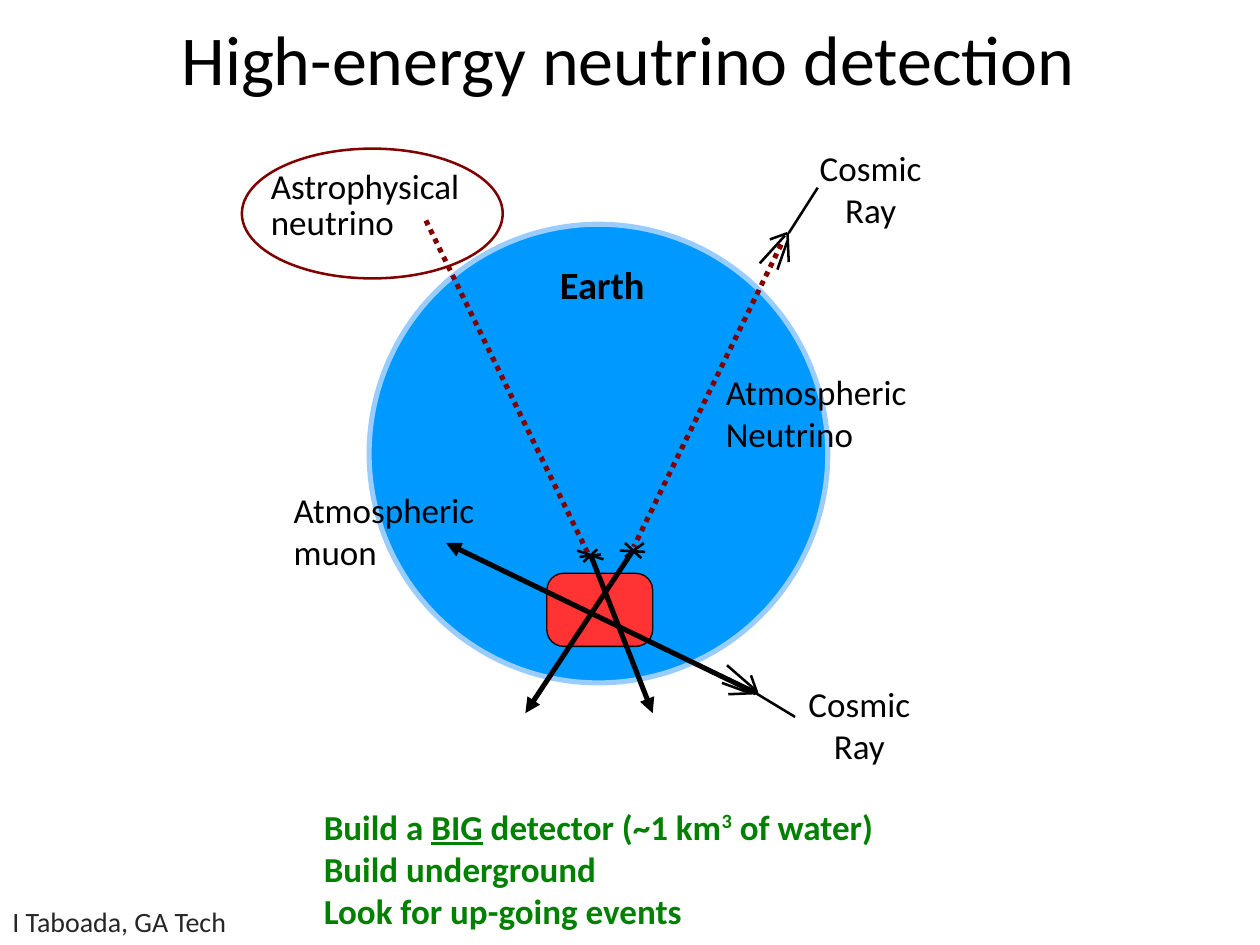
from dataclasses import dataclass

from lxml.etree import SubElement
from pptx import Presentation
from pptx.dml.color import RGBColor
from pptx.enum.dml import MSO_LINE
from pptx.enum.shapes import MSO_CONNECTOR, MSO_SHAPE
from pptx.enum.text import MSO_ANCHOR, PP_ALIGN
from pptx.oxml.ns import qn
from pptx.util import Inches, Pt


@dataclass(frozen=True)
class Theme:
    font: str = "Calibri"
    ink: str = "000000"
    footer: str = "262626"
    neutrino: str = "800000"
    conclusion: str = "008000"
    earth: str = "0099FF"
    atmosphere: str = "99CCFF"
    detector: str = "FF3333"
    title_size: float = 40
    earth_size: float = 22
    label_size: float = 20
    footer_size: float = 16
    thick: float = 2.89
    thin: float = 1.45
    hairline: float = 0.75


@dataclass(frozen=True)
class Box:
    left: float
    top: float
    width: float
    height: float

    def inner(self, left, top, width, height):
        return Box(self.left + left, self.top + top, width, height)

    def point(self, x, y):
        return Inches(self.left + x), Inches(self.top + y)

    def lengths(self):
        return [Inches(v) for v in (self.left, self.top, self.width, self.height)]


THEME = Theme()


def color(code):
    return RGBColor.from_string(code)


def format_text(frame, size, ink=THEME.ink, bold=False, align=PP_ALIGN.LEFT):
    for para in frame.paragraphs:
        para.alignment = align
        for span in para.runs:
            span.font.name = THEME.font
            span.font.size = Pt(size)
            span.font.bold = bold
            span.font.color.rgb = color(ink)


def add_label(page, box, text, size=THEME.label_size, margins=(0.09, 0.04),
              wrap=True, **style):
    frame = page.shapes.add_textbox(*box.lengths()).text_frame
    frame.word_wrap = wrap
    frame.margin_left = frame.margin_right = Inches(margins[0])
    frame.margin_top = frame.margin_bottom = Inches(margins[1])
    frame.text = text
    format_text(frame, size, **style)
    return frame


def add_outline(page, kind, box, line, width, fill=None):
    shape = page.shapes.add_shape(kind, *box.lengths())
    shape.shadow.inherit = False
    if fill:
        shape.fill.solid()
        shape.fill.fore_color.rgb = color(fill)
    else:
        shape.fill.background()
    shape.line.color.rgb = color(line)
    shape.line.width = Pt(width)
    return shape


def add_line(page, box, start, end, ink=THEME.ink, width=THEME.thin,
             dotted=False, arrow=False):
    line = page.shapes.add_connector(
        MSO_CONNECTOR.STRAIGHT, *box.point(*start), *box.point(*end))
    line.line.color.rgb = color(ink)
    line.line.width = Pt(width)
    if dotted:
        line.line.dash_style = MSO_LINE.ROUND_DOT
    if arrow:
        SubElement(line.line._get_or_add_ln(), qn("a:tailEnd"), type="triangle")
    SubElement(line._element.spPr, qn("a:effectLst"))


def add_title(page, box):
    title = page.shapes.title
    title.left, title.top, title.width, title.height = box.lengths()
    frame = title.text_frame
    frame.text = "High-energy neutrino detection"
    frame.vertical_anchor = MSO_ANCHOR.MIDDLE
    format_text(frame, THEME.title_size, align=PP_ALIGN.CENTER)


def add_footer(page, box):
    add_label(page, box, "I Taboada, GA Tech", THEME.footer_size,
              margins=(0.1, 0.05), wrap=False, ink=THEME.footer)


def add_conclusions(page, box):
    frame = add_label(page, box, "\nBuild underground\nLook for up-going events")
    first = frame.paragraphs[0]
    for text in ("Build a ", "BIG", " detector (~1 km", "3", " of water)"):
        first.add_run().text = text
    format_text(frame, THEME.label_size, THEME.conclusion, bold=True)
    first.runs[1].font.underline = True
    first.runs[3].font._element.set("baseline", "33000")


def add_earth(page, box):
    add_outline(page, MSO_SHAPE.OVAL, box.inner(0.93, 0.78, 3.64, 3.64),
                THEME.atmosphere, THEME.thick, THEME.earth)
    detector = add_outline(
        page, MSO_SHAPE.ROUNDED_RECTANGLE, box.inner(2.34, 3.55, 0.84, 0.58),
        THEME.ink, THEME.hairline, THEME.detector)
    detector.adjustments[0] = 0.23


def add_tracks(page, box):
    # Dotted neutrino paths
    for start, end in (((4.2, 0.94), (3.03, 3.34)), ((1.38, 0.75), (2.67, 3.4))):
        add_line(page, box, start, end, THEME.neutrino, THEME.thick, dotted=True)
    # Muon arrows
    for start, end in (((4, 4.5), (1.54, 3.31)),
                       ((3.03, 3.36), (2.17, 4.66)),
                       ((2.69, 3.41), (3.18, 4.66))):
        add_line(page, box, start, end, width=THEME.thick, arrow=True)
    # Cosmic ray showers, then the stars where neutrinos interact
    strokes = (
        ((4.31, 4.69), (3.98, 4.49)), ((4, 4.48), (3.77, 4.28)),
        ((3.95, 4.5), (3.73, 4.42)), ((4.01, 4.5), (3.96, 4.36)),
        ((4.01, 4.5), (3.78, 4.51)),
        ((4.49, 0.49), (4.26, 0.85)), ((4.23, 0.87), (4.03, 1.09)),
        ((4.25, 0.91), (4.17, 1.14)), ((4.25, 0.85), (4.11, 0.9)),
        ((4.25, 0.85), (4.26, 1.08)),
        ((3.12, 3.38), (2.92, 3.37)), ((3.09, 3.43), (2.96, 3.31)),
        ((3.11, 3.31), (2.96, 3.42)),
        ((2.77, 3.4), (2.6, 3.42)), ((2.63, 3.46), (2.74, 3.36)),
        ((2.79, 3.44), (2.58, 3.37)),
    )
    for start, end in strokes:
        add_line(page, box, start, end)


def add_diagram_labels(page, box):
    source = add_label(page, box.inner(0.15, 0.35, 1.84, 0.59),
                       "Astrophysical\vneutrino", margins=(0, 0))
    source.paragraphs[0].line_spacing = 0.87
    add_outline(page, MSO_SHAPE.OVAL, box.inner(-0.08, 0.18, 2.07, 1.03),
                THEME.neutrino, THEME.thin)
    for left, top in ((4.33, 0.12), (4.24, 4.38)):
        add_label(page, box.inner(left, top, 1.16, 0.73), "Cosmic\nRay",
                  align=PP_ALIGN.CENTER)
    add_label(page, box.inner(3.67, 1.9, 1.69, 0.71), "Atmospheric\vNeutrino")
    add_label(page, box.inner(0.24, 2.84, 1.71, 0.73), "Atmospheric\nmuon")
    add_label(page, box.inner(2.31, 1.03, 0.94, 0.43), "Earth",
              THEME.earth_size, bold=True, align=PP_ALIGN.CENTER)


def main():
    deck = Presentation()
    deck.slide_width, deck.slide_height = Inches(10), Inches(7.5)
    page = deck.slides.add_slide(deck.slide_layouts[5])
    add_footer(page, Box(0, 7.13, 1.92, 0.37))
    add_title(page, Box(0.11, 0.01, 9.75, 0.89))
    add_conclusions(page, Box(2.48, 6.35, 5.04, 1.02))
    diagram = Box(2, 1, 5.5, 5.2)
    add_earth(page, diagram)
    add_tracks(page, diagram)
    add_diagram_labels(page, diagram)
    deck.save("out.pptx")


if __name__ == "__main__":
    main()
